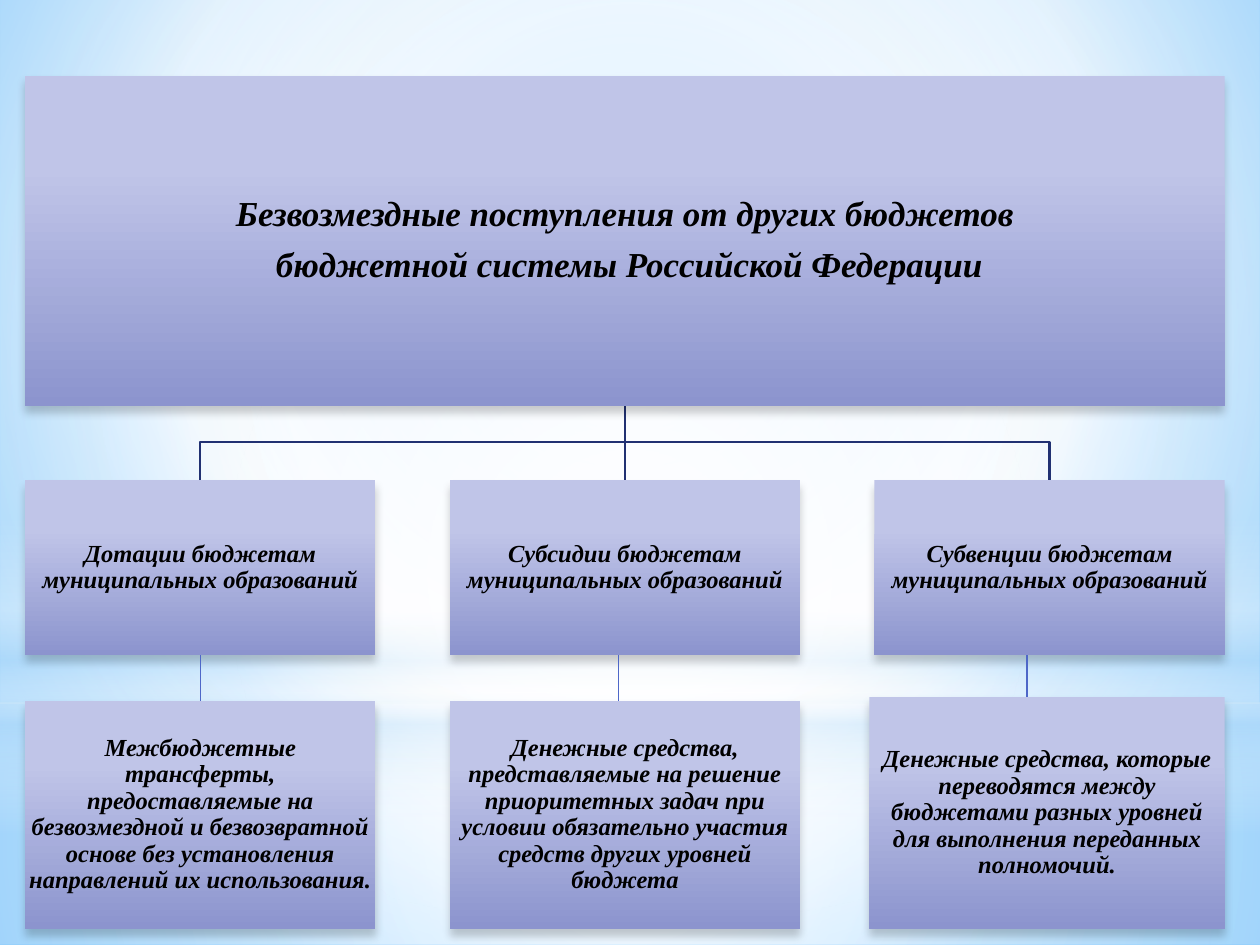
from dataclasses import dataclass
from typing import Any

from pptx import Presentation
from pptx import util as u
from pptx.dml.color import RGBColor
from pptx.enum import shapes, text
from pptx.oxml import parse_xml
from pptx.oxml.ns import nsdecls, qn

BLACK = RGBColor(0x00, 0x00, 0x00)
WHITE = RGBColor(0xFF, 0xFF, 0xFF)
SKY = RGBColor(0x9E, 0xD5, 0xFF)
AZURE = RGBColor(0x5B, 0xB9, 0xFF)
HAZE = RGBColor(0xB4, 0xDC, 0xFA)
LILAC = RGBColor(0xC0, 0xC5, 0xE8)
VIOLET = RGBColor(0x8C, 0x94, 0xCE)
NAVY = RGBColor(0x21, 0x31, 0x72)
BLUE = RGBColor(0x4E, 0x67, 0xC8)

CENTER = (50, 50, 50, 50)
LEFT, STEP, WIDTH = 0.2, 3.37, 2.78
TYPES = ["Дотации", "Субсидии", "Субвенции"]
DETAILS = [
    ("Межбюджетные трансферты, предоставляемые на безвозмездной и безвозвратной "
     "основе без установления направлений их использования. ", (0.2, 5.56, 2.78, 1.81), 1.59),
    ("Денежные средства, представляемые на решение приоритетных задач при условии "
     "обязательно участия средств других уровней бюджета", (3.57, 5.56, 2.78, 1.81), 4.91),
    ("Денежные средства, которые переводятся между бюджетами разных уровней "
     "для выполнения переданных полномочий.", (6.9, 5.53, 2.82, 1.84), 8.15),
]


@dataclass
class Deck:
    """Holds the text style and the current slide, and draws its elements."""

    s: Any
    font: str = "Times New Roman"
    color: RGBColor = BLACK

    def gradient(self, parent, stops, focus=None):
        gs = "".join(
            f'<a:gs pos="{pos * 1000}"><a:srgbClr val="{color}">'
            f'<a:alpha val="{alpha * 1000}"/></a:srgbClr></a:gs>'
            for pos, color, alpha in stops)
        if focus:
            l, t, r, b = (v * 1000 for v in focus)
            kind = (f'<a:path path="circle"><a:fillToRect l="{l}" t="{t}" '
                    f'r="{r}" b="{b}"/></a:path>')
        else:
            kind = '<a:lin ang="5400000" scaled="0"/>'
        fill = parse_xml(f'<a:gradFill {nsdecls("a")} rotWithShape="1">'
                         f'<a:gsLst>{gs}</a:gsLst>{kind}</a:gradFill>')
        parent.replace(parent.find(qn("a:solidFill")), fill)

    def background(self, stops, focus):
        self.s.background.fill.solid()
        self.gradient(self.s.element.find(".//" + qn("p:bgPr")), stops, focus)

    def panel(self, at, stops, focus=None, kind=shapes.MSO_SHAPE.RECTANGLE):
        sp = self.s.shapes.add_shape(kind, *map(u.Inches, at))
        sp.shadow.inherit = False
        sp.fill.solid()
        self.gradient(sp.element.spPr, stops, focus)
        sp.line.fill.background()
        return sp

    def box(self, at, lines, size):
        sp = self.panel(at, [(28, LILAC, 100), (100, VIOLET, 100)])
        sp.element.spPr.find(qn("a:effectLst")).append(parse_xml(
            f'<a:outerShdw {nsdecls("a")} blurRad="{u.Pt(5)}" dist="{u.Pt(4)}" '
            f'dir="5400000" rotWithShape="0"><a:srgbClr val="{BLACK}">'
            '<a:alpha val="20000"/></a:srgbClr></a:outerShdw>'))
        tf = sp.text_frame
        tf.word_wrap = True
        tf.vertical_anchor = text.MSO_ANCHOR.MIDDLE
        tf.margin_left = tf.margin_right = tf.margin_top = tf.margin_bottom = u.Inches(0.01)
        tf.text = "\n".join(lines)
        for p in tf.paragraphs:
            p.alignment = text.PP_ALIGN.CENTER
            p.line_spacing = 0.9
            p.line_spacing = 0.9
            p.space_after = u.Pt(0)
            after = p._p.pPr.find(qn("a:spcAft"))
            after.replace(after[0], parse_xml(f'<a:spcPct {nsdecls("a")} val="35000"/>'))
            for r in p.runs:
                r.font.name = self.font
                r.font.size = u.Pt(size)
                r.font.bold = r.font.italic = True
                r.font.color.rgb = self.color
        return sp

    def connector(self, start, end, color, width):
        cn = self.s.shapes.add_connector(
            shapes.MSO_CONNECTOR.STRAIGHT, *map(u.Inches, start + end))
        cn.line.color.rgb = color
        cn.line.width = u.Pt(width)
        cn.element.spPr.append(parse_xml(f'<a:effectLst {nsdecls("a")}/>'))
        return cn

    def branch(self, points, color, width):
        first, *rest = [tuple(map(u.Inches, point)) for point in points]
        fb = self.s.shapes.build_freeform(*first)
        fb.add_line_segments(rest, close=False)
        sp = fb.convert_to_shape()
        sp.shadow.inherit = False
        sp.fill.background()
        sp.line.color.rgb = color
        sp.line.width = u.Pt(width)


def main():
    prs = Presentation()
    prs.slide_width, prs.slide_height = u.Inches(10), u.Inches(7.5)
    deck = Deck(prs.slides.add_slide(prs.slide_layouts[6]))

    deck.background([(0, SKY, 100), (60, WHITE, 100), (100, AZURE, 100)], (20, 10, 20, 60))
    deck.panel((0, 5.58, 10, 1.92), [(0, WHITE, 91), (37, WHITE, 76), (100, HAZE, 79)], CENTER)
    deck.panel((0, 0, 10, 5.58), [(0, WHITE, 89), (48, WHITE, 62), (100, HAZE, 79)], CENTER)
    deck.panel((0, 4.12, 10, 2.5), [(0, WHITE, 0), (29, WHITE, 30), (45, HAZE, 40),
                                    (55, WHITE, 26), (65, HAZE, 60), (100, WHITE, 0)])
    deck.panel((0, 1.75, 10, 5.58), [(0, WHITE, 100), (56, WHITE, 0)], CENTER,
               shapes.MSO_SHAPE.OVAL)

    centers = [LEFT + i * STEP + WIDTH / 2 for i in range(3)]
    middle = centers[1]
    for x in (centers[2], centers[0]):
        deck.branch([(middle, 3.22), (middle, 3.51), (x, 3.51), (x, 3.81)], NAVY, 1.25)
    trunk = deck.connector((middle, 3.22), (middle, 3.81), NAVY, 1.25)

    title = deck.box((LEFT, 0.6, 9.52, 2.62),
                     ["Безвозмездные поступления от других бюджетов",
                      " бюджетной системы Российской Федерации"], 20)
    heads = [deck.box((LEFT + i * STEP, 3.81, WIDTH, 1.39),
                      [f"{name} бюджетам муниципальных образований"], 14)
             for i, name in enumerate(TYPES)]
    trunk.begin_connect(title, 2)
    trunk.end_connect(heads[1], 0)

    details = [deck.box(at, [words], 14) for words, at, _ in DETAILS]
    links = [deck.connector((x, 5.2), (x, at[1]), BLUE, 0.75) for _, at, x in DETAILS]
    links[0].begin_connect(heads[0], 2)
    links[0].end_connect(details[0], 0)

    prs.save("out.pptx")


if __name__ == "__main__":
    main()
